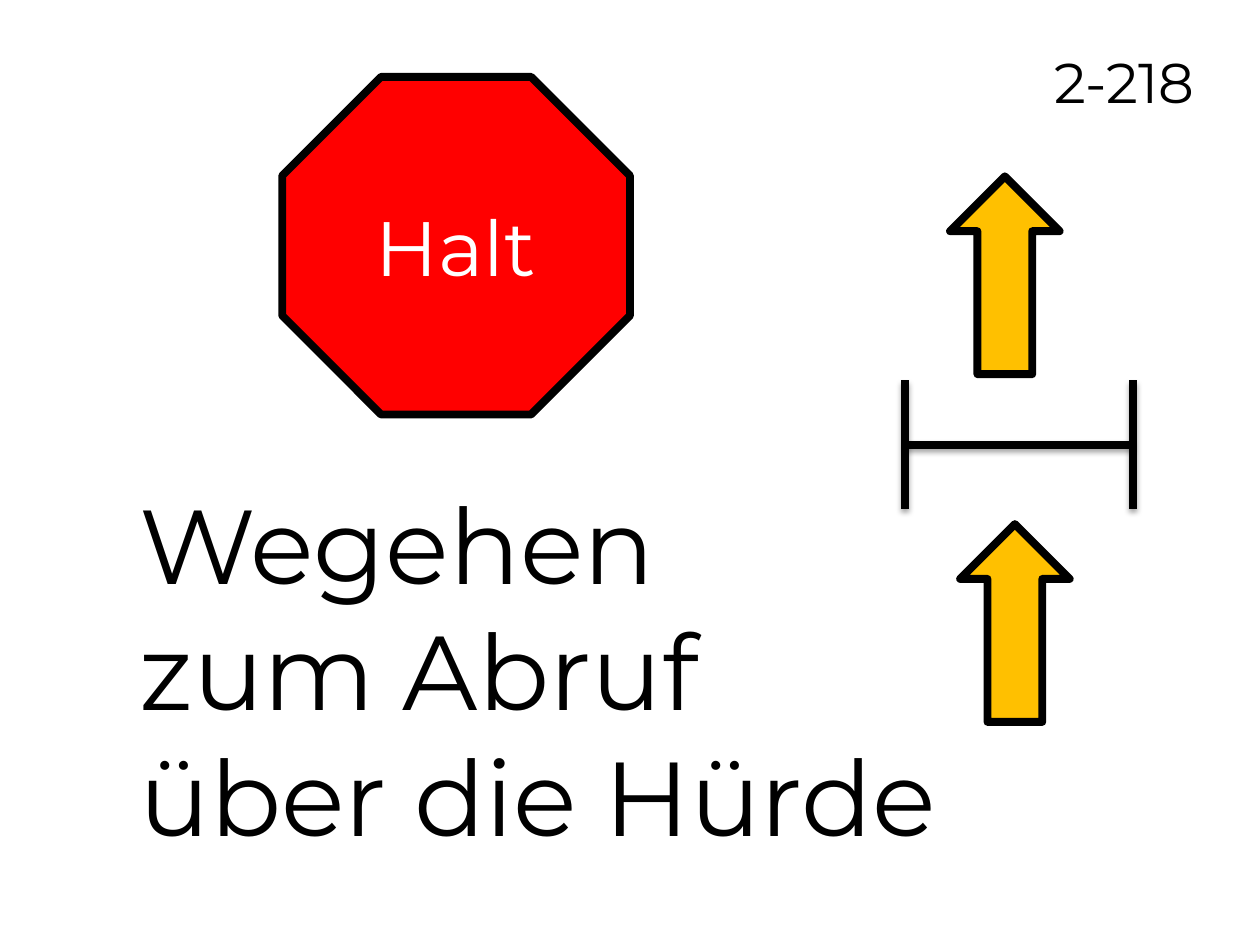
import collections

import lxml.etree
import pptx
import pptx.dml.color
import pptx.enum.shapes
import pptx.enum.text
import pptx.oxml.ns
import pptx.util

COLUMNS, ROWS = 100, 75
WIDTH, HEIGHT = pptx.util.Inches(10), pptx.util.Inches(7.5)
FONT = "Montserrat"
BLACK, WHITE, RED, AMBER = "000000", "FFFFFF", "FF0000", "FFC000"
OUTLINE = 4.5

Box = collections.namedtuple("Box", "left top width height")
SHAPES = pptx.enum.shapes.MSO_SHAPE
ALIGN = pptx.enum.text.PP_ALIGN
ANCHOR = pptx.enum.text.MSO_ANCHOR


def color(value):
    return pptx.dml.color.RGBColor.from_string(value)


def across(columns):
    return round(WIDTH * columns / COLUMNS)


def down(rows):
    return round(HEIGHT * rows / ROWS)


def to_slide(box):
    return across(box.left), down(box.top), across(box.width), down(box.height)


def write(frame, text, size, ink=BLACK, align=ALIGN.LEFT, anchor=ANCHOR.TOP):
    frame.vertical_anchor = anchor
    for index, line in enumerate(text.split("\n")):
        para = frame.paragraphs[0] if index == 0 else frame.add_paragraph()
        para.alignment = align
        span = para.add_run()
        span.text = line
        span.font.name = FONT
        span.font.size = pptx.util.Pt(size)
        span.font.color.rgb = color(ink)


def add_label(page, box, text, size, wrap):
    frame = page.shapes.add_textbox(*to_slide(box)).text_frame
    frame.word_wrap = wrap
    frame.auto_size = pptx.enum.text.MSO_AUTO_SIZE.SHAPE_TO_FIT_TEXT
    write(frame, text, size)


def add_outlined(page, kind, box, fill):
    shape = page.shapes.add_shape(kind, *to_slide(box))
    shape.shadow.inherit = False
    shape.fill.solid()
    shape.fill.fore_color.rgb = color(fill)
    shape.line.color.rgb = color(BLACK)
    shape.line.width = pptx.util.Pt(OUTLINE)
    return shape


def add_shadow(line):
    qn = pptx.oxml.ns.qn
    effects = lxml.etree.SubElement(line._element.spPr, qn("a:effectLst"))
    shadow = lxml.etree.SubElement(
        effects, qn("a:outerShdw"), blurRad=str(pptx.util.Pt(3.1)),
        dist=str(pptx.util.Pt(1.8)), dir="5400000", rotWithShape="0")
    tint = lxml.etree.SubElement(shadow, qn("a:srgbClr"), val=BLACK)
    lxml.etree.SubElement(tint, qn("a:alpha"), val="35000")


def add_bar(page, start, end):
    line = page.shapes.add_connector(
        pptx.enum.shapes.MSO_CONNECTOR.STRAIGHT,
        across(start[0]), down(start[1]), across(end[0]), down(end[1]))
    line.line.color.rgb = color(BLACK)
    line.line.width = pptx.util.Pt(OUTLINE)
    add_shadow(line)


def add_hurdle(page, box):
    right, bottom = box.left + box.width, box.top + box.height
    middle = box.top + box.height / 2
    add_bar(page, (box.left, middle), (right, middle))
    for post in (box.left, right):
        add_bar(page, (post, box.top), (post, bottom))


def add_jump_path(page, box):
    arrow_width, arrow_height = 8.7, 15.7
    add_hurdle(page, Box(box.left, box.top + 16.2, box.width, 10.2))
    last_top = box.height - arrow_height
    for left, top in ((3.6, 0), (4.4, last_top)):
        arrow = Box(box.left + left, box.top + top, arrow_width, arrow_height)
        add_outlined(page, SHAPES.UP_ARROW, arrow, AMBER)


def add_stop_sign(page, box, text):
    sign = add_outlined(page, SHAPES.OCTAGON, box, RED)
    write(sign.text_frame, text, 44, WHITE, ALIGN.CENTER, ANCHOR.MIDDLE)


def main():
    deck = pptx.Presentation()
    deck.slide_width, deck.slide_height = WIDTH, HEIGHT
    page = deck.slides.add_slide(deck.slide_layouts[6])
    add_label(page, Box(82.7, 3.3, 15.5, 6.4), "2-218", 32, False)
    add_label(page, Box(10.1, 37.6, 70, 31.3),
              "Wegehen\nzum Abruf\nüber die Hürde", 60, True)
    add_jump_path(page, Box(71.8, 14, 18.1, 43.3))
    add_stop_sign(page, Box(22.4, 6.1, 27.6, 26.8), "Halt")
    deck.save("out.pptx")


if __name__ == "__main__":
    main()
